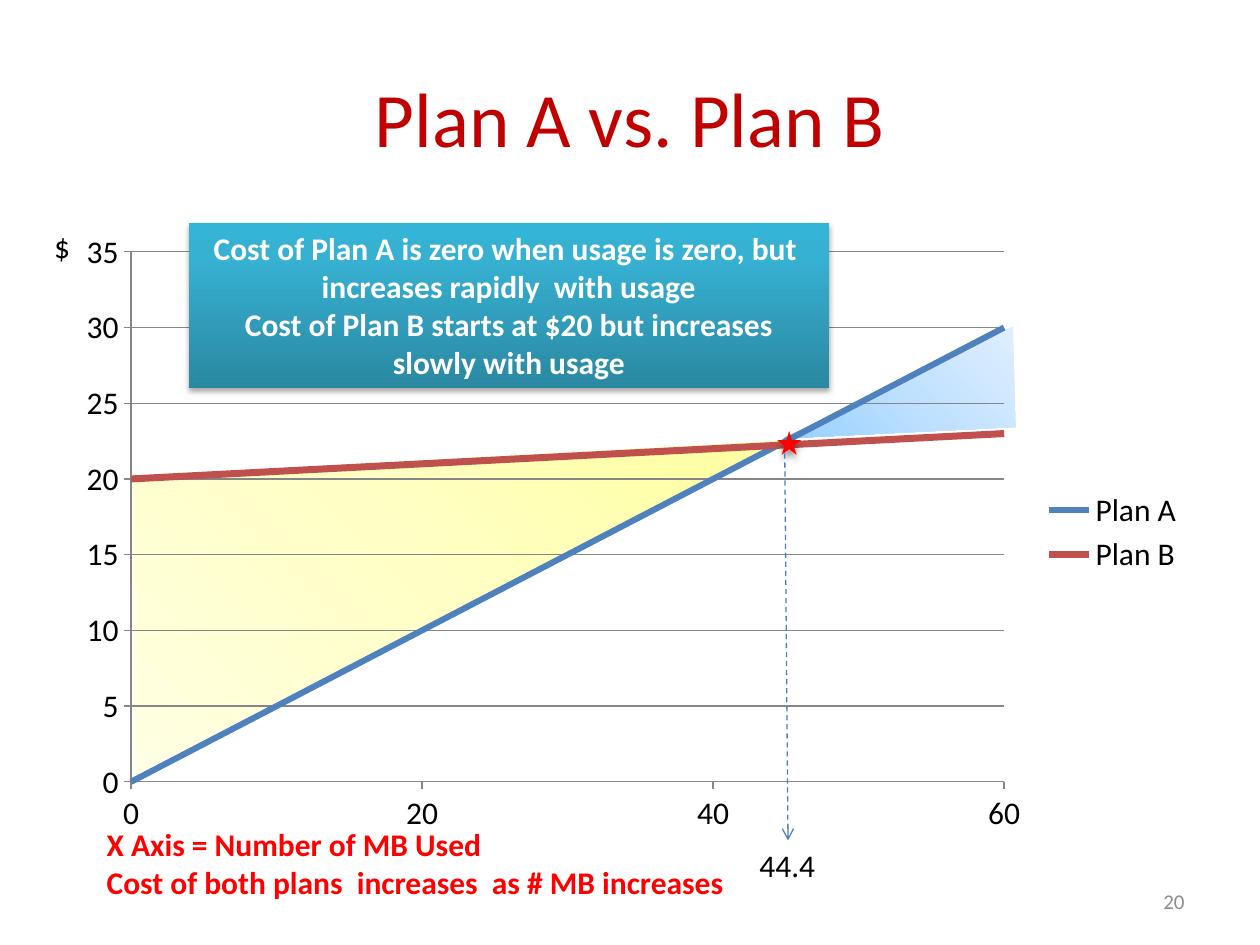
from dataclasses import dataclass

import pptx
import pptx.chart.data
import pptx.dml.color
import pptx.enum.chart
import pptx.enum.dml
import pptx.enum.shapes
import pptx.enum.text
import pptx.oxml
import pptx.oxml.ns
import pptx.util
from pptx.util import Cm, Pt

FONT = "Calibri"
COLORS = {
    "title": "C00000", "text": "000000", "accent": "FF0000", "white": "FFFFFF",
    "number": "8C8C8C", "plan_a": "4F81BD", "plan_b": "C0504D",
    "grid": "868686", "arrow": "4B7EBC",
}
ALIGN = pptx.enum.text.PP_ALIGN
ANCHOR = pptx.enum.text.MSO_ANCHOR
SHAPE = pptx.enum.shapes.MSO_SHAPE


@dataclass
class Region:
    """Shaded area between the two plans; points in cm, stops as (percent, hex)."""
    points: list
    stops: list
    focus: str


@dataclass
class Label:
    lines: list
    box: tuple
    style: dict


REGIONS = [
    Region([(20.42, 6.58), (20.47, 8.61), (15.8, 8.84)],
           [(0, "96D0FF"), (50, "BFE1FF"), (100, "E0EFFF")], 't="100000" r="100000"'),
    Region([(2.69, 9.55), (2.72, 15.62), (15.8, 8.89), (2.82, 9.6), (2.82, 9.65)],
           [(0, "FFFFA0"), (50, "FFFFC5"), (100, "FFFFE3")], 'l="100000" b="100000"'),
]
BREAK_EVEN = Label(["44.4"], (15.06, 16.94, 1.65, 1.02), {})
LABELS = [
    Label(["$"], (0.84, 4.45, 0.84, 1.02), {}),
    Label(["X Axis = Number of MB Used", "Cost of both plans  increases  as # MB increases"],
          (1.9, 16.51, 13.06, 1.8), {"color": "accent", "bold": True}),
    Label(["20"], (18.21, 17.65, 5.92, 1.02),
          {"size": 12, "color": "number", "align": ALIGN.RIGHT,
           "anchor": ANCHOR.MIDDLE, "wrap": True}),
]


def rgb(name: str) -> pptx.dml.color.RGBColor:
    return pptx.dml.color.RGBColor.from_string(COLORS[name])


def a_element(body: str):
    """Parse one DrawingML element whose opening tag is a:<name>."""
    tag, rest = body.split(">", 1)
    return pptx.oxml.parse_xml(f"{tag} {pptx.oxml.ns.nsdecls('a')}>{rest}")


def write(s, lines, size=18, color="text", bold=False, align=ALIGN.LEFT,
          anchor=ANCHOR.TOP, wrap=False) -> None:
    tf = s.text_frame
    tf.word_wrap = wrap
    tf.vertical_anchor = anchor
    for i, line in enumerate(lines):
        p = tf.paragraphs[0] if i == 0 else tf.add_paragraph()
        p.alignment = align
        r = p.add_run()
        r.text = line
        r.font.name, r.font.size, r.font.bold = FONT, Pt(size), bold
        r.font.color.rgb = rgb(color)


def add_label(slide, label: Label):
    s = slide.shapes.add_textbox(*map(Cm, label.box))
    write(s, label.lines, **label.style)
    return s


def fill_gradient(s, stops: list, direction: str) -> None:
    s.fill.gradient()
    gs = "".join(f'<a:gs pos="{pos * 1000}"><a:srgbClr val="{c}"/></a:gs>' for pos, c in stops)
    grad = a_element(f'<a:gradFill rotWithShape="1"><a:gsLst>{gs}</a:gsLst>{direction}</a:gradFill>')
    sp_pr = s._element.spPr
    sp_pr.replace(sp_pr.find(pptx.oxml.ns.qn("a:gradFill")), grad)


def add_shadow(s, alpha: int, blur: float, dist: float) -> None:
    s.shadow.inherit = False
    effects = s._element.spPr.find(pptx.oxml.ns.qn("a:effectLst"))
    effects.append(a_element(
        f'<a:outerShdw blurRad="{Pt(blur)}" dist="{Pt(dist)}" dir="5400000" rotWithShape="0">'
        f'<a:srgbClr val="000000"><a:alpha val="{alpha * 1000}"/></a:srgbClr></a:outerShdw>'))


def add_region(slide, region: Region) -> None:
    points = [(Cm(x), Cm(y)) for x, y in region.points]
    builder = slide.shapes.build_freeform(*points[0])
    builder.add_line_segments(points[1:], close=True)
    s = builder.convert_to_shape()
    s.shadow.inherit = False
    s.line.fill.background()
    fill_gradient(s, region.stops,
                  f'<a:path path="circle"><a:fillToRect {region.focus}/></a:path>')


def place_plot(chart, x: float, y: float, w: float, h: float) -> None:
    """Fix the inner plot area, in fractions of the chart."""
    area = chart._chartSpace.chart.plotArea
    old = area.find(pptx.oxml.ns.qn("c:layout"))
    if old is not None:
        area.remove(old)
    values = "".join(f'<c:{k} val="{v}"/>' for k, v in zip("xywh", (x, y, w, h)))
    area.insert(0, pptx.oxml.parse_xml(
        f'<c:layout {pptx.oxml.ns.nsdecls("c")}><c:manualLayout><c:layoutTarget val="inner"/>'
        f'<c:xMode val="edge"/><c:yMode val="edge"/>{values}</c:manualLayout></c:layout>'))


def add_cost_chart(slide) -> None:
    data = pptx.chart.data.CategoryChartData()
    data.categories = ["0", "20", "40", "60"]
    data.add_series("Plan A", [0, 10, 20, 30])
    data.add_series("Plan B", [20, 21, 22, 23])
    chart = slide.shapes.add_chart(pptx.enum.chart.XL_CHART_TYPE.LINE, Cm(1.27), Cm(4.45),
                                   Cm(22.86), Cm(12.57), data).chart
    chart.has_title = False
    chart.font.name, chart.font.size = FONT, Pt(18)
    chart.font.color.rgb = rgb("text")
    chart.has_legend = True
    chart.legend.position = pptx.enum.chart.XL_LEGEND_POSITION.RIGHT
    chart.legend.include_in_layout = False
    chart.plots[0].vary_by_categories = False
    for series, color, width in zip(chart.plots[0].series, ("plan_a", "plan_b"), (3.5, 4)):
        series.smooth = False
        series.marker.style = pptx.enum.chart.XL_MARKER_STYLE.NONE
        series.format.line.color.rgb = rgb(color)
        series.format.line.width = Pt(width)
    axis = chart.value_axis
    axis.minimum_scale, axis.maximum_scale, axis.major_unit = 0, 35, 5
    axis.has_major_gridlines = True
    for line in (axis.major_gridlines.format.line, axis.format.line,
                 chart.category_axis.format.line):
        line.color.rgb = rgb("grid")
        line.width = Pt(0.75)
    # The first category sits on the value axis.
    between = axis._element.find(pptx.oxml.ns.qn("c:crossBetween"))
    if between is None:
        between = pptx.oxml.parse_xml(f'<c:crossBetween {pptx.oxml.ns.nsdecls("c")}/>')
        axis._element.find(pptx.oxml.ns.qn("c:majorUnit")).addprevious(between)
    between.set("val", "midCat")
    place_plot(chart, 0.06, 0.05, 0.77, 0.85)


def add_break_even(slide) -> None:
    star = slide.shapes.add_shape(SHAPE.STAR_5_POINT, Cm(15.67), Cm(8.69), Cm(0.48), Cm(0.48))
    star.fill.solid()
    star.fill.fore_color.rgb = rgb("accent")
    star.line.fill.background()
    add_shadow(star, 40, 4, 3)
    label = add_label(slide, BREAK_EVEN)
    arrow = slide.shapes.add_connector(pptx.enum.shapes.MSO_CONNECTOR.STRAIGHT,
                                       Cm(15.82), Cm(9.14), Cm(15.88), Cm(16.94))
    arrow.end_connect(label, 0)
    arrow.line.color.rgb = rgb("arrow")
    arrow.line.width = Pt(0.75)
    arrow.line.dash_style = pptx.enum.dml.MSO_LINE.DASH
    arrow.line._get_or_add_ln().append(a_element('<a:tailEnd type="arrow"></a:tailEnd>'))
    arrow._element.spPr.append(a_element("<a:effectLst></a:effectLst>"))


def add_callout(slide) -> None:
    s = slide.shapes.add_shape(SHAPE.RECTANGLE, Cm(3.81), Cm(4.5), Cm(12.9), Cm(3.33))
    s.line.fill.background()
    fill_gradient(s, [(0, "2A88A2"), (80, "37B1D2"), (100, "34B4D6")],
                  '<a:lin ang="16200000" scaled="0"/>')
    add_shadow(s, 35, 3.1, 1.8)
    write(s, ["Cost of Plan A is zero when usage is zero, but  increases rapidly  with usage",
              "Cost of Plan B starts at $20 but increases slowly with usage"],
          color="white", bold=True, align=ALIGN.CENTER, wrap=True)


def main() -> None:
    prs = pptx.Presentation()
    prs.slide_width, prs.slide_height = Cm(25.4), Cm(19.05)
    slide = prs.slides.add_slide(prs.slide_layouts[5])
    title = slide.shapes.title
    title.left, title.top, title.width, title.height = map(Cm, (1.27, 0.76, 22.86, 3.18))
    write(title, ["Plan A vs. Plan B"], size=44, color="title", align=ALIGN.CENTER,
          anchor=ANCHOR.MIDDLE, wrap=True)
    for region in REGIONS:
        add_region(slide, region)
    add_cost_chart(slide)
    add_break_even(slide)
    for label in LABELS:
        add_label(slide, label)
    add_callout(slide)
    prs.save("out.pptx")


if __name__ == "__main__":
    main()
